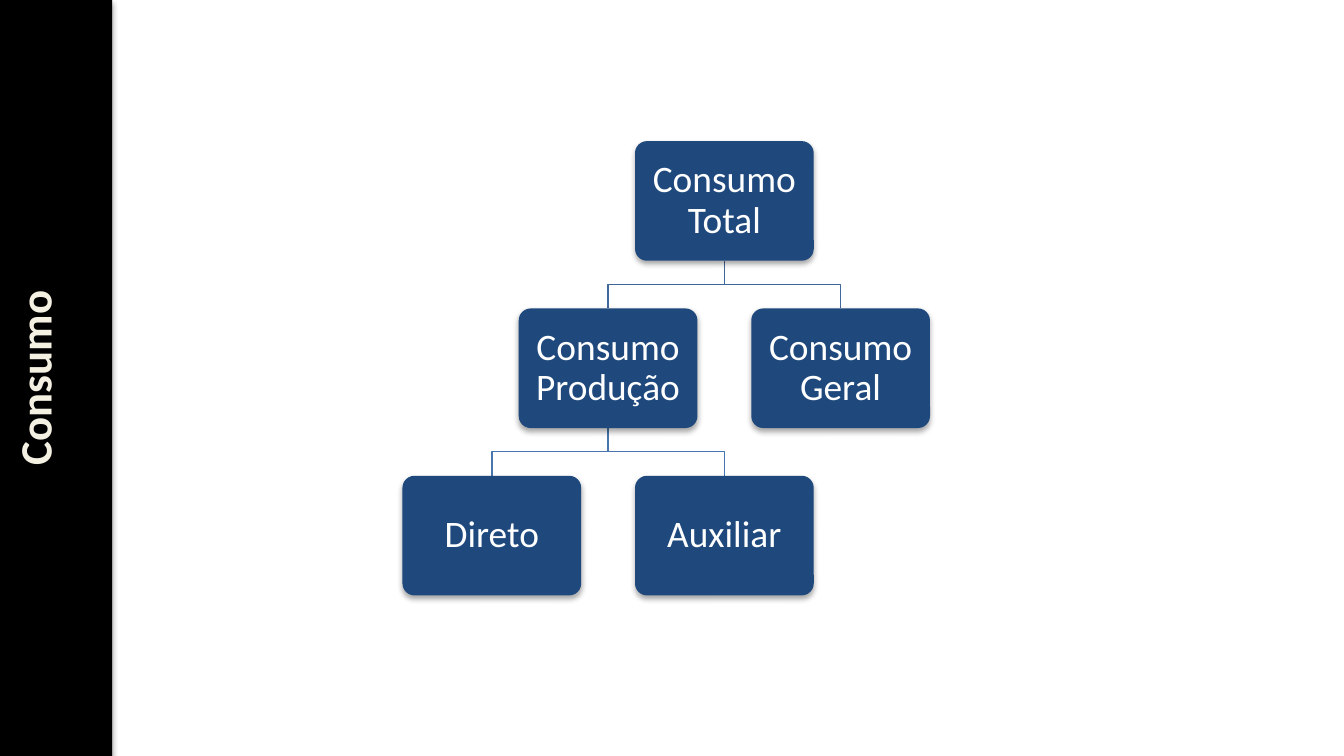
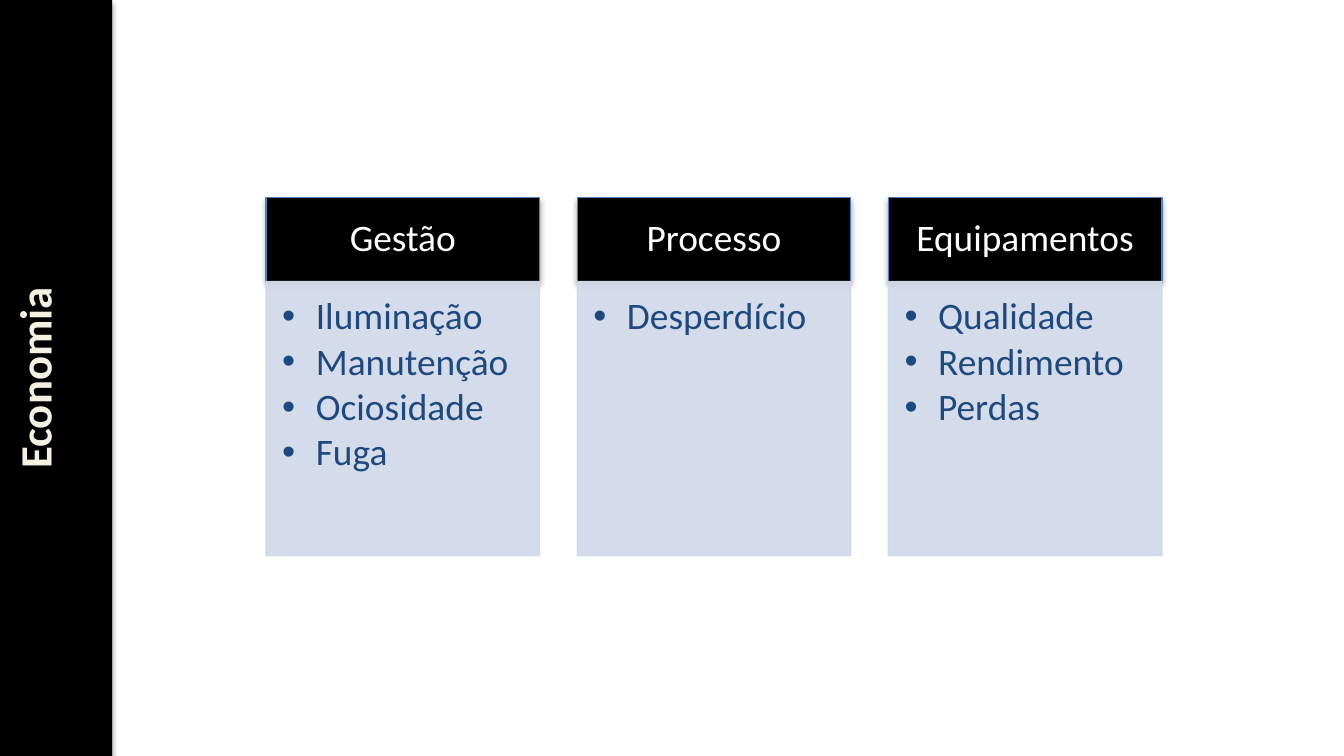
from lxml import etree
from pptx import Presentation
from pptx import util as u
from pptx.dml.color import RGBColor
from pptx.enum import shapes, text
from pptx.oxml.ns import qn

PX = u.Inches(1) // 200
WIDTH, HEIGHT = 2000, 1125
BAND = 101
FONT = "Calibri"
COLORS = {
    "black": "000000",
    "white": "FFFFFF",
    "cream": "F4F1E3",
    "navy": "1F497D",
    "blue": "4F81BD",
    "pale": "D0D8E8",
    "link_top": "3F6797",
    "link_low": "4875AC",
}


def rgb(name):
    return RGBColor.from_string(COLORS[name])


def add_bullet(p, indent):
    ppr = p._p.get_or_add_pPr()
    ppr.set("marL", str(indent * PX))
    ppr.set("indent", str(-indent * PX))
    etree.SubElement(ppr, qn("a:buFont"), typeface="Arial")
    etree.SubElement(ppr, qn("a:buChar"), char="•")


def write_text(tf, content, size=20, color="white", bold=False, align="CENTER",
               anchor="MIDDLE", spacing=0.9, after=0, insets=(20, 10, 20, 10), bullet=0):
    """Fill a text frame, one paragraph per line of content."""
    tf.word_wrap = True
    tf.vertical_anchor = getattr(text.MSO_ANCHOR, anchor)
    tf.margin_left, tf.margin_top, tf.margin_right, tf.margin_bottom = (
        i * PX for i in insets)
    for i, line in enumerate(content.split("\n")):
        p = tf.paragraphs[0] if i == 0 else tf.add_paragraph()
        p.alignment = getattr(text.PP_ALIGN, align)
        p.line_spacing = spacing
        p.space_after = u.Pt(after)
        if bullet:
            p.level = 1
            add_bullet(p, bullet)
        r = p.add_run()
        r.text = line
        r.font.name, r.font.size, r.font.bold = FONT, u.Pt(size), bold
        r.font.color.rgb = rgb(color)


class Deck:
    """Shared style and the slide being drawn."""

    def __init__(self):
        self.prs = Presentation()
        self.prs.slide_width = WIDTH * PX
        self.prs.slide_height = HEIGHT * PX
        self.s = None

    def slide(self, title):
        """Start a slide with its title in the vertical band at the left."""
        self.s = self.prs.slides.add_slide(self.prs.slide_layouts[5])
        sp = self.s.shapes.title
        sp.left, sp.top = (BAND - HEIGHT) * PX // 2, (HEIGHT - BAND) * PX // 2
        sp.width, sp.height = HEIGHT * PX, BAND * PX
        sp.rotation = 270
        self.paint(sp, "black", shadow=True)
        write_text(sp.text_frame, title, size=24, color="cream", bold=True,
                   anchor="TOP", spacing=1.0)
        sp.text_frame.auto_size = text.MSO_AUTO_SIZE.SHAPE_TO_FIT_TEXT

    def paint(self, sp, fill=None, line=None, shadow=False, alpha=100):
        sp.shadow.inherit = False
        if fill:
            sp.fill.solid()
            sp.fill.fore_color.rgb = rgb(fill)
        else:
            sp.fill.background()
        if line:
            sp.line.color.rgb = rgb(line)
            sp.line.width = u.Pt(0.75)
        else:
            sp.line.fill.background()
        sppr = sp._element.spPr
        if alpha < 100:
            for clr in sppr.iter(qn("a:srgbClr")):
                etree.SubElement(clr, qn("a:alpha"), val=str(alpha * 1000))
        if shadow:
            outer = etree.SubElement(
                sppr.find(qn("a:effectLst")), qn("a:outerShdw"), blurRad="40000",
                dist="23000", dir="5400000", rotWithShape="0")
            clr = etree.SubElement(outer, qn("a:srgbClr"), val=COLORS["black"])
            etree.SubElement(clr, qn("a:alpha"), val="35000")

    def box(self, x, y, w, h, content, kind="RECTANGLE", fmt=None, **paint):
        sp = self.s.shapes.add_shape(getattr(shapes.MSO_SHAPE, kind),
                                     x * PX, y * PX, w * PX, h * PX)
        if kind == "ROUNDED_RECTANGLE":
            sp.adjustments[0] = 0.1
        self.paint(sp, **paint)
        write_text(sp.text_frame, content, **(fmt or {}))

    def branch(self, x1, y1, x2, y2, color):
        """Stepped line that turns halfway down."""
        mid = (y1 + y2) // 2
        fb = self.s.shapes.build_freeform(x1, y1, scale=PX)
        fb.add_line_segments([(x1, mid), (x2, mid), (x2, y2)], close=False)
        self.paint(fb.convert_to_shape(), line=color)


def consumption_slide(deck):
    deck.slide("Consumo")
    node_w, node_h = 266, 178
    root_x, root_y, half_step, row_step = 1078, 210, 173, 249

    # Nodes: text, half steps from the root, row, parent
    nodes = [
        ("Consumo Total", 0, 0, None),
        ("Consumo Produção", -1, 1, 0),
        ("Direto", -2, 2, 1),
        ("Auxiliar", 0, 2, 1),
        ("Consumo Geral", 1, 1, 0),
    ]
    centers = [root_x + col * half_step for _, col, _, _ in nodes]
    tops = [root_y + row * row_step for _, _, row, _ in nodes]

    # Branches lie behind the nodes
    for x, y, (_, _, row, parent) in zip(centers, tops, nodes):
        if parent is not None:
            deck.branch(centers[parent], tops[parent] + node_h, x, y,
                        "link_top" if row == 1 else "link_low")
    for x, y, (label, *_) in zip(centers, tops, nodes):
        deck.box(x - node_w // 2, y, node_w, node_h, label, kind="ROUNDED_RECTANGLE",
                 fmt={"insets": (20, 20, 20, 20)}, fill="navy", shadow=True)


def savings_slide(deck):
    deck.slide("Economia")
    left, top, step, width = 396, 294, 463, 407
    head_h, body_h = 125, 408
    columns = {
        "Gestão": "Iluminação\nManutenção\nOciosidade\nFuga",
        "Processo": "Desperdício",
        "Equipamentos": "Qualidade\nRendimento\nPerdas",
    }
    body_fmt = dict(color="navy", align="LEFT", anchor="TOP", after=2.7,
                    insets=(24, 24, 32, 34), bullet=50)

    # Each column: black header over a pale list
    for i, (head, items) in enumerate(columns.items()):
        x = left + i * step
        deck.box(x, top, width, head_h, head, fmt={"insets": (32, 18, 32, 18)},
                 fill="black", line="blue", shadow=True)
        deck.box(x, top + head_h, width, body_h, items, fmt=body_fmt,
                 fill="pale", line="pale", alpha=90)


def main():
    deck = Deck()
    consumption_slide(deck)
    savings_slide(deck)
    deck.prs.save("out.pptx")


if __name__ == "__main__":
    main()
